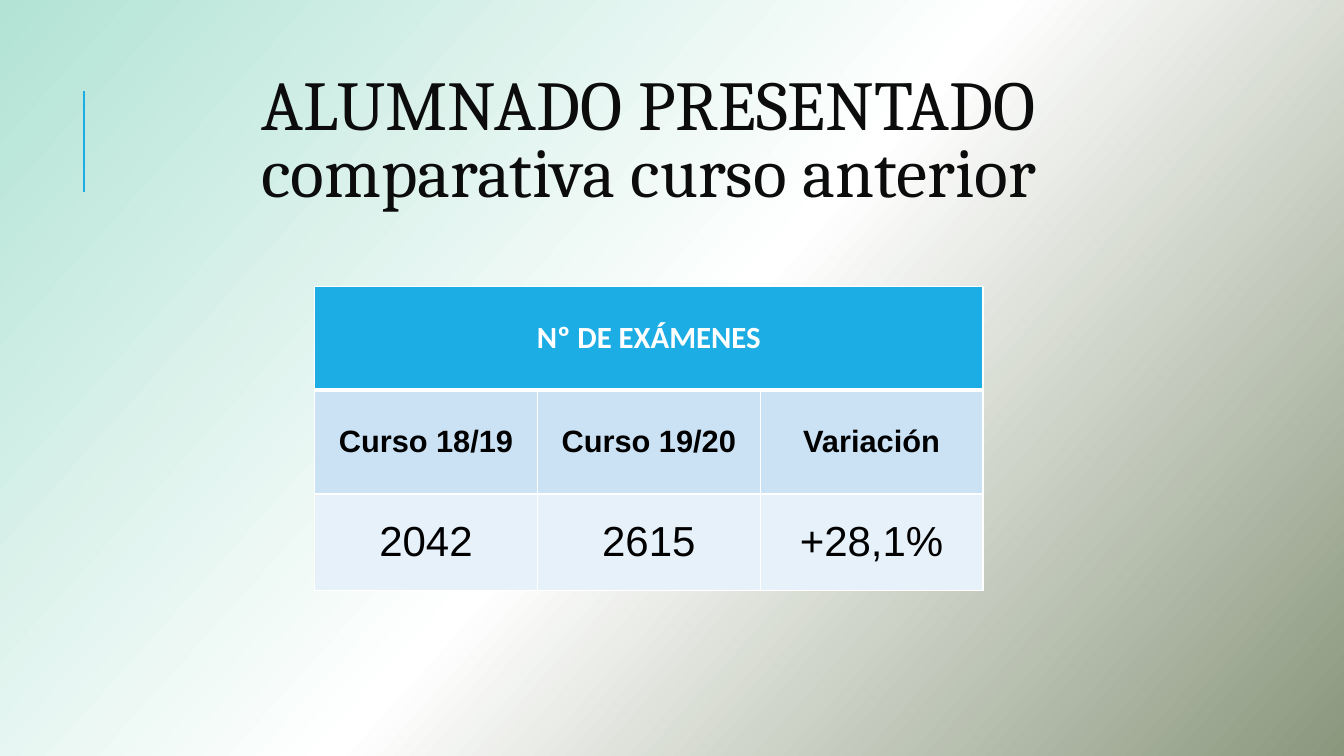
from copy import deepcopy

from lxml import etree
from pptx import Presentation
from pptx.dml.color import RGBColor
from pptx.enum.shapes import MSO_CONNECTOR
from pptx.enum.text import MSO_ANCHOR, PP_ALIGN
from pptx.oxml.ns import qn
from pptx.util import Inches, Pt

STRAIGHT = MSO_CONNECTOR.STRAIGHT
MIDDLE = MSO_ANCHOR.MIDDLE
CENTER = PP_ALIGN.CENTER

COLORS = {
    "mint": "B2E3D5",
    "white": "FFFFFF",
    "olive": "8A977D",
    "accent": "1CADE4",
    "title": "0C0C0C",
    "black": "000000",
    "band": "CBE2F5",
    "pale": "E7F1FA",
}
TITLE_LINES = ["ALUMNADO PRESENTADO", "comparativa curso anterior"]
TITLE_FORMAT = {"name": "Cambria", "size": Pt(50), "color": "title"}

# Each row: height, fill, top and bottom border widths, font format, texts
EXAM_ROWS = [
    (1.03, "accent", 1, 3,
     {"name": "Calibri", "size": Pt(22), "bold": True, "color": "white"},
     ["Nº DE EXÁMENES"]),
    (1.03, "band", 3, 1,
     {"name": "Arial", "size": Pt(22), "bold": True, "color": "black"},
     ["Curso 18/19", "Curso 19/20", "Variación"]),
    (0.96, "pale", 1, 1,
     {"name": "Arial", "size": Pt(30), "bold": False, "color": "black"},
     ["2042", "2615", "+28,1%"]),
]


def rgb(name):
    return RGBColor.from_string(COLORS[name])


def write_centered(para, text, font_format):
    para.alignment = CENTER
    span = para.add_run()
    span.text = text
    for attribute, value in font_format.items():
        if attribute == "color":
            span.font.color.rgb = rgb(value)
        else:
            setattr(span.font, attribute, value)


def paint_background(page):
    fill = page.background.fill
    fill.gradient()
    fill.gradient_angle = 360 - 42
    first_stop = next(page.background._cSld.iter(qn("a:gs")))
    first_stop.addnext(deepcopy(first_stop))
    for stop, position, color in zip(
            fill.gradient_stops, (0, 0.5, 1), ("mint", "white", "olive")):
        stop.position = position
        stop.color.rgb = rgb(color)


def add_accent_line(page, left, top, height):
    line = page.shapes.add_connector(
        STRAIGHT, Inches(left), Inches(top + height), Inches(left), Inches(top))
    line.line.color.rgb = rgb("accent")
    line.line.width = Pt(1.5)
    etree.SubElement(line._element.spPr, qn("a:effectLst"))


def add_title(page, left, top, width, height):
    box = page.shapes.add_textbox(
        Inches(left), Inches(top), Inches(width), Inches(height))
    frame = box.text_frame
    frame.word_wrap = True
    frame.vertical_anchor = MIDDLE
    for index, text in enumerate(TITLE_LINES):
        para = frame.add_paragraph() if index else frame.paragraphs[0]
        para.line_spacing = 0.8
        write_centered(para, text, TITLE_FORMAT)


def set_borders(cell, widths):
    properties = cell._tc.get_or_add_tcPr()
    for side, points in widths.items():
        border = etree.SubElement(
            properties, qn(f"a:ln{side}"), w=str(Pt(points)))
        solid = etree.SubElement(border, qn("a:solidFill"))
        etree.SubElement(solid, qn("a:srgbClr"), val=COLORS["white"])


def add_exam_table(page, left, top, width):
    column_count = 3
    height = sum(row[0] for row in EXAM_ROWS)
    table = page.shapes.add_table(
        len(EXAM_ROWS), column_count, Inches(left), Inches(top),
        Inches(width), Inches(height)).table
    for column in table.columns:
        column.width = Inches(width / column_count)

    for row_index, row_data in enumerate(EXAM_ROWS):
        row_height, fill, above, below, font_format, texts = row_data
        table.rows[row_index].height = Inches(row_height)
        for column_index in range(column_count):
            cell = table.cell(row_index, column_index)
            set_borders(cell, {"L": 1, "R": 1, "T": above, "B": below})
            cell.fill.solid()
            cell.fill.fore_color.rgb = rgb(fill)
            cell.vertical_anchor = MIDDLE
            if column_index < len(texts):
                write_centered(cell.text_frame.paragraphs[0],
                               texts[column_index], font_format)

    # The heading spans every column
    table.cell(0, 0).merge(table.cell(0, column_count - 1))


def build_comparison_slide(deck):
    page = deck.slides.add_slide(deck.slide_layouts[6])
    paint_background(page)
    add_accent_line(page, 0.83, 0.9, 1)
    add_title(page, 1.12, 0.61, 10.63, 1.64)
    add_exam_table(page, 3.12, 2.84, 6.63)


def main():
    deck = Presentation()
    deck.slide_width = Inches(13.33)
    deck.slide_height = Inches(7.5)
    build_comparison_slide(deck)
    deck.save("out.pptx")


if __name__ == "__main__":
    main()
